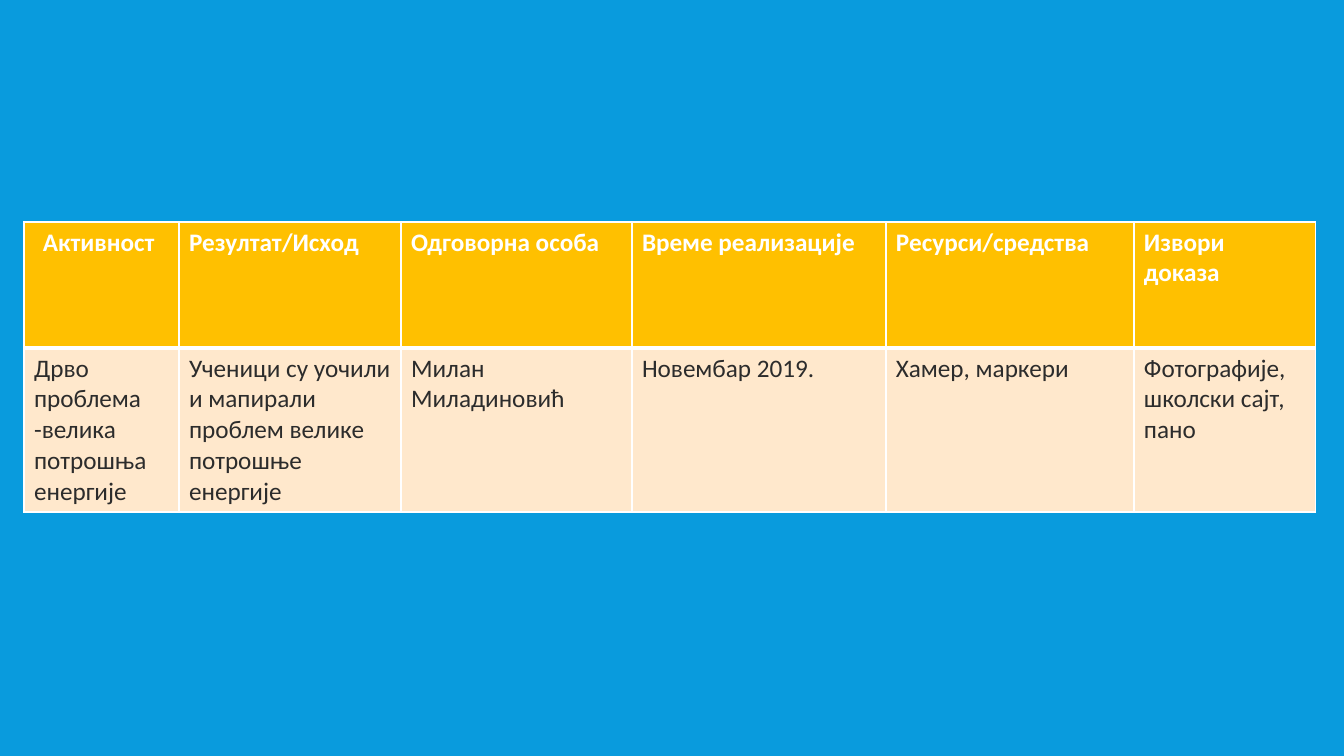
from dataclasses import dataclass

from lxml.etree import SubElement
from pptx import Presentation
from pptx.dml.color import RGBColor
from pptx.enum.text import PP_ALIGN
from pptx.oxml.ns import qn
from pptx.util import Emu, Pt


@dataclass(frozen=True)
class Theme:
    back: str = "099BDD"
    head: str = "FFC000"
    body: str = "FFE8CC"
    light: str = "FFFFFF"
    dark: str = "2C2C2C"
    font: str = "Calibri"
    size: int = 18
    thin: int = 1
    thick: int = 3


THEME = Theme()
SCALE = 12192000 / 1344  # EMU in one px

COLS = [155, 222, 231, 254, 248, 182]
ROWS = [126, 164]
HEAD = ["Активност ", "Резултат/Исход", "Одговорна особа",
        "Време реализације", "Ресурси/средства", "Извори доказа"]
BODY = ["Дрво проблема -велика потрошња енергије",
        "Ученици су уочили и мапирали проблем велике потрошње енергије",
        "Милан Миладиновић", "Новембар 2019.", "Хамер, маркери",
        "Фотографије, школски сајт, пано"]


def px(num):
    return Emu(round(num * SCALE))


def tint(fill, color):
    fill.solid()
    fill.fore_color.rgb = RGBColor.from_string(color)


def write(cell, text, color, bold):
    run = cell.text_frame.paragraphs[0].add_run()
    run.text = text
    font = run.font
    font.name, font.size, font.bold = THEME.font, Pt(THEME.size), bold
    font.color.rgb = RGBColor.from_string(color)


def edge(cell, top, low):
    """Draw the four cell borders; they precede the fill in the cell XML."""
    props = cell._tc.get_or_add_tcPr()
    widths = {"lnL": THEME.thin, "lnR": THEME.thin, "lnT": top, "lnB": low}
    for spot, (tag, width) in enumerate(widths.items()):
        line = SubElement(props, qn(f"a:{tag}"), w=str(Pt(width)))
        fill = SubElement(line, qn("a:solidFill"))
        SubElement(fill, qn("a:srgbClr"), val=THEME.light)
        props.insert(spot, line)


def grid(slide, left, top):
    frame = slide.shapes.add_table(len(ROWS), len(COLS), px(left), px(top),
                                   px(sum(COLS)), px(sum(ROWS)))
    table = frame.table
    table.horz_banding = False
    for col, width in zip(table.columns, COLS):
        col.width = px(width)
    for row, height in zip(table.rows, ROWS):
        row.height = px(height)
    return table


def fill_row(row, texts, back, color, bold, top, low):
    for cell, text in zip(row.cells, texts):
        tint(cell.fill, back)
        edge(cell, top, low)
        write(cell, text, color, bold)


def main():
    deck = Presentation()
    deck.slide_width, deck.slide_height = px(1344), px(756)
    slide = deck.slides.add_slide(deck.slide_layouts[6])
    tint(slide.background.fill, THEME.back)

    # Activity plan
    table = grid(slide, 24, 222)
    fill_row(table.rows[0], HEAD, THEME.head, THEME.light, True,
             THEME.thin, THEME.thick)
    fill_row(table.rows[1], BODY, THEME.body, THEME.dark, False,
             THEME.thick, THEME.thin)
    table.cell(0, 0).text_frame.paragraphs[0].alignment = PP_ALIGN.CENTER

    deck.save("out.pptx")


if __name__ == "__main__":
    main()
